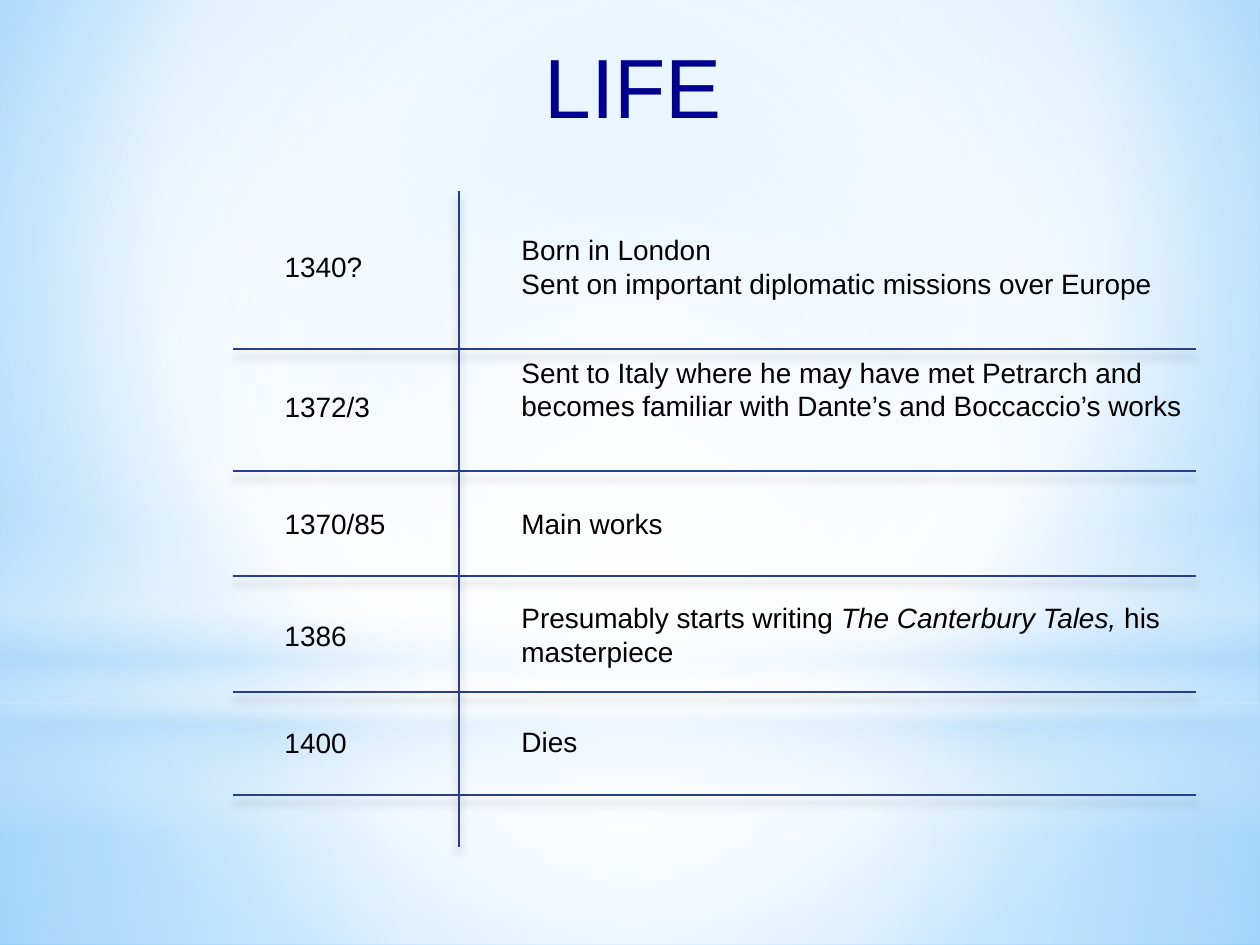
from lxml import etree
from pptx import Presentation
from pptx.dml.color import RGBColor
from pptx.enum.shapes import MSO_CONNECTOR, MSO_SHAPE
from pptx.enum.text import MSO_ANCHOR, PP_ALIGN
from pptx.oxml import parse_xml
from pptx.oxml.ns import nsdecls, qn
from pptx.util import Inches, Pt

RECTANGLE, OVAL = MSO_SHAPE.RECTANGLE, MSO_SHAPE.OVAL
STRAIGHT = MSO_CONNECTOR.STRAIGHT
TOP, CENTER = MSO_ANCHOR.TOP, PP_ALIGN.CENTER

FONT = "Arial"
NAVY, BLACK, RULE = "000090", "000000", "2A3E8E"
WHITE, SKY = "FFFFFF", "B4DCFA"
CENTRED = (50, 50, 50, 50)
COLUMNS, ROWS = 100, 75

BACKGROUND = [(0, "9ED5FF", 100), (60, WHITE, 100), (100, "5BB9FF", 100)]
GLOWS = [
    (RECTANGLE, (0, 55.8, 100, 19.2), CENTRED,
     [(0, WHITE, 91), (37, WHITE, 76), (100, SKY, 79)]),
    (RECTANGLE, (0, 0, 100, 55.8), CENTRED,
     [(0, WHITE, 89), (48, WHITE, 62), (100, SKY, 79)]),
    (RECTANGLE, (0, 41.2, 100, 25), None,
     [(0, WHITE, 0), (29, WHITE, 30), (45, SKY, 40),
      (55, WHITE, 26), (65, SKY, 60), (100, WHITE, 0)]),
    (OVAL, (0, 17.5, 100, 55.8), CENTRED, [(0, WHITE, 100), (56, WHITE, 0)]),
]

TITLE_BOX = (3.4, 1.5, 93.2, 11.1)
TIMELINE_BOX = (18.5, 15.2, 76.4, 52)
YEAR_COLUMN, DIVIDER_COLUMN, EVENT_COLUMN = 3.1, 17.9, 21.9
LINE_HEIGHT, EVENT_WIDTH = 3.7, 54.5
TIMELINE = [
    ("1340?", 4.1, 8.2,
     [["Born in London"], ["Sent on important diplomatic missions over Europe"]],
     2.8, EVENT_WIDTH, 6.4, 12.5),
    ("1372/3", 15.2, 8.9,
     [["Sent to Italy where he may have met Petrarch and becomes familiar "
       "with Dante’s and Boccaccio’s works"]],
     12.5, EVENT_WIDTH, 9.1, 22.2),
    ("1370/85", 24.5, 10.1, [["Main works"]], 24.5, 13.4, LINE_HEIGHT, 30.5),
    ("1386", 33.4, 7,
     [["Presumably starts writing ", "The Canterbury Tales, ", "his masterpiece"]],
     32, EVENT_WIDTH, 6.4, 39.7),
    ("1400", 41.9, 7, [["Dies"]], 41.8, 6.5, LINE_HEIGHT, 47.9),
]


def color(value):
    """Turn a hex string into a colour."""
    return RGBColor.from_string(value)


def grid(*units):
    """Turn grid units of a tenth of an inch into lengths."""
    return [Inches(unit / 10) for unit in units]


def set_gradient(properties, stops, focus):
    """Replace a solid fill by a radial gradient, or a vertical one without focus."""
    stop_xml = "".join(
        f'<a:gs pos="{position * 1000}"><a:srgbClr val="{value}">'
        f'<a:alpha val="{opacity * 1000}"/></a:srgbClr></a:gs>'
        for position, value, opacity in stops)
    direction = '<a:lin ang="5400000" scaled="0"/>'
    if focus:
        edges = " ".join(f'{side}="{share * 1000}"' for side, share in zip("ltrb", focus))
        direction = f'<a:path path="circle"><a:fillToRect {edges}/></a:path>'
    gradient = parse_xml(
        f'<a:gradFill {nsdecls("a")} rotWithShape="1">'
        f'<a:gsLst>{stop_xml}</a:gsLst>{direction}</a:gradFill>')
    properties.replace(properties.find(qn("a:solidFill")), gradient)


def add_backdrop(slide):
    """Paint the background and lay the soft glows over it."""
    slide.background.fill.solid()
    background = next(slide.element.iter(qn("p:bgPr")))
    set_gradient(background, BACKGROUND, (20, 10, 20, 60))
    for preset, box, focus, stops in GLOWS:
        shape = slide.shapes.add_shape(preset, *grid(*box))
        shape.shadow.inherit = False
        shape.fill.solid()
        shape.line.fill.background()
        set_gradient(shape.element.spPr, stops, focus)


def add_text(slide, box, paragraphs, size=16, value=BLACK, wrap=True):
    """Add a text box in which every second run is italic."""
    text_frame = slide.shapes.add_textbox(*grid(*box)).text_frame
    text_frame.word_wrap = wrap
    text_frame.vertical_anchor = TOP
    for index, runs in enumerate(paragraphs):
        paragraph = text_frame.add_paragraph() if index else text_frame.paragraphs[0]
        for position, text in enumerate(runs):
            run = paragraph.add_run()
            run.text = text
            run.font.name = FONT
            run.font.size = Pt(size)
            run.font.italic = position % 2 == 1
            run.font.color.rgb = color(value)
    return text_frame


def add_title(slide, box):
    """Add the centred slide title."""
    text_frame = add_text(slide, box, [["LIFE"]], 48, NAVY)
    text_frame.margin_left, text_frame.margin_top = grid(1.5, 1.2)
    text_frame.paragraphs[0].alignment = CENTER


def add_rule(slide, *ends):
    """Draw a thin line with a faint shadow below it."""
    line = slide.shapes.add_connector(STRAIGHT, *grid(*ends))
    line.line.color.rgb = color(RULE)
    line.line.width = Pt(1.25)
    effects = etree.SubElement(line.element.spPr, qn("a:effectLst"))
    shadow = etree.SubElement(
        effects, qn("a:outerShdw"), blurRad=str(Pt(5)), dist=str(Pt(4)),
        dir="5400000", rotWithShape="0")
    shade = etree.SubElement(shadow, qn("a:srgbClr"), val=BLACK)
    etree.SubElement(shade, qn("a:alpha"), val="20000")


def add_timeline(slide, box):
    """Add years and events in two columns parted by rules."""
    left, top, width, height = box
    for year, year_top, year_width, event, event_top, event_width, event_height, _ in TIMELINE:
        year_box = (left + YEAR_COLUMN, top + year_top, year_width, LINE_HEIGHT)
        event_box = (left + EVENT_COLUMN, top + event_top, event_width, event_height)
        add_text(slide, year_box, [[year]], wrap=False)
        add_text(slide, event_box, event, wrap=event_width == EVENT_WIDTH)
    for *_, rule in TIMELINE:
        add_rule(slide, left, top + rule, left + width, top + rule)
    divider = left + DIVIDER_COLUMN
    add_rule(slide, divider, top, divider, top + height)


def main():
    """Build and save the slide."""
    presentation = Presentation()
    presentation.slide_width, presentation.slide_height = grid(COLUMNS, ROWS)
    slide = presentation.slides.add_slide(presentation.slide_layouts[6])
    add_backdrop(slide)
    add_title(slide, TITLE_BOX)
    add_timeline(slide, TIMELINE_BOX)
    presentation.save("out.pptx")


if __name__ == "__main__":
    main()
